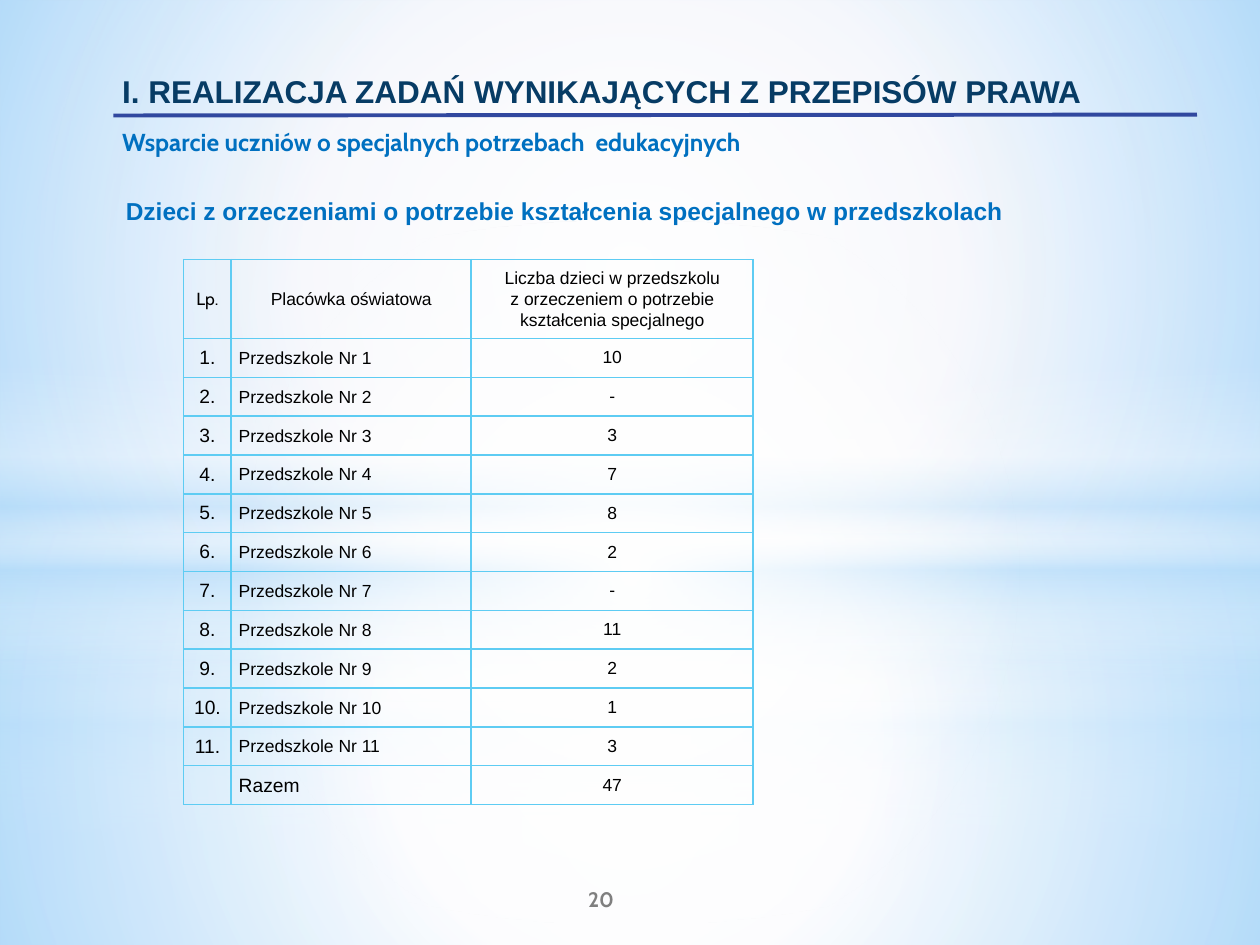
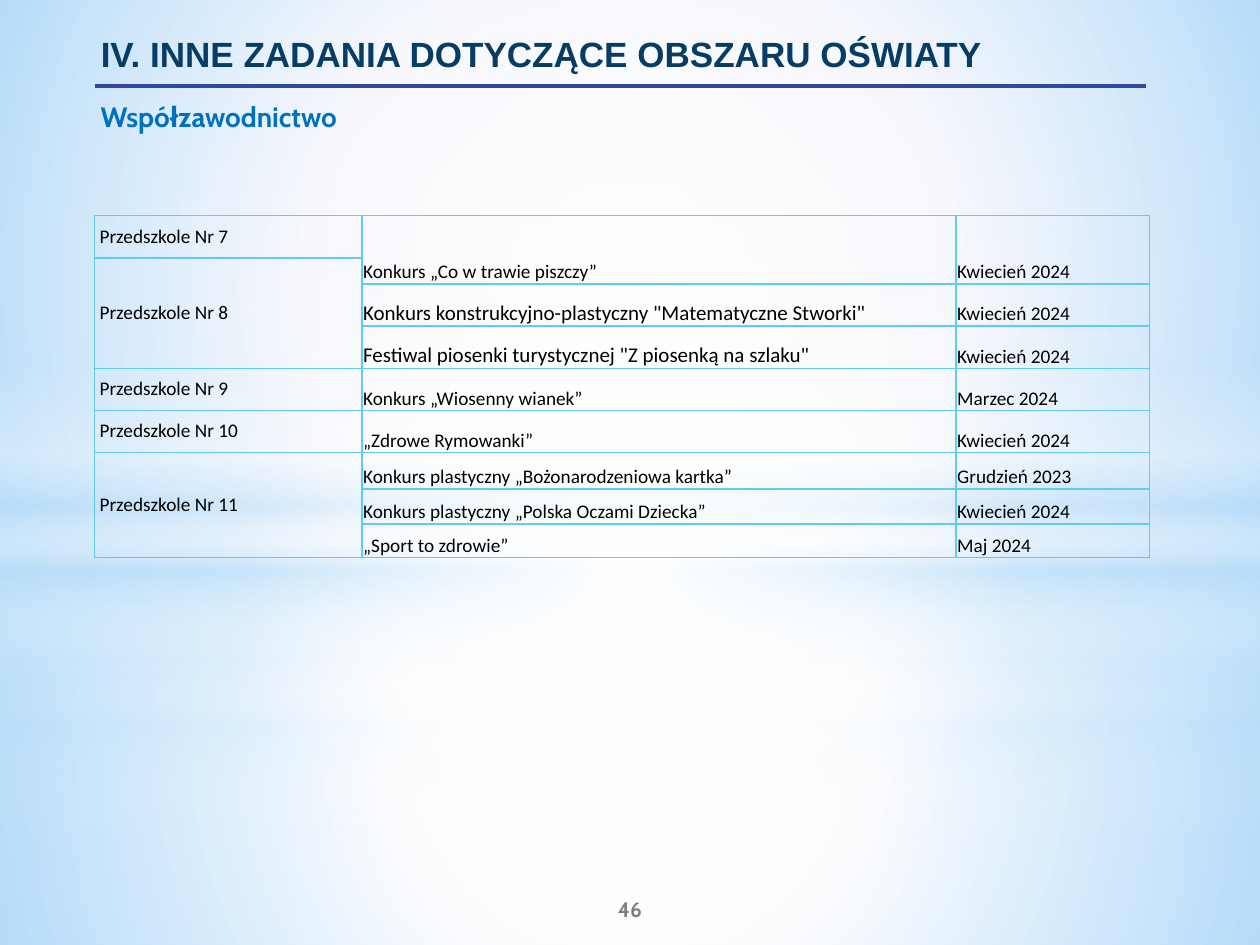
from lxml import etree
from pptx import Presentation
from pptx.dml.color import RGBColor
from pptx.enum.shapes import MSO_CONNECTOR, MSO_SHAPE
from pptx.enum.text import MSO_ANCHOR, PP_ALIGN
from pptx.oxml import parse_xml
from pptx.oxml.ns import qn
from pptx.util import Pt

RECTANGLE, ELLIPSE = MSO_SHAPE.RECTANGLE, MSO_SHAPE.OVAL
STRAIGHT = MSO_CONNECTOR.STRAIGHT
TOP, MIDDLE, BOTTOM = MSO_ANCHOR.TOP, MSO_ANCHOR.MIDDLE, MSO_ANCHOR.BOTTOM
LEFT, CENTER, JUSTIFY = PP_ALIGN.LEFT, PP_ALIGN.CENTER, PP_ALIGN.JUSTIFY

WIDTH, HEIGHT = 720, 540
NAVY, BLUE, RULE = "073C65", "0070C0", "31489F"
GRAY, BLACK, GRID = "7F7F7F", "000000", "5ECCF3"
WHITE, SKY, BACKDROP = "FFFFFF", "B4DCFA", "CAD1EE"
DRAWING = "http://schemas.openxmlformats.org/drawingml/2006/main"

# Gradient stops: position, colour, opacity in percent
LOWER_GLOW = [(0, WHITE, 91), (37, WHITE, 76), (100, SKY, 79)]
UPPER_GLOW = [(0, WHITE, 89), (48, WHITE, 62), (100, SKY, 79)]
BAND = [(0, WHITE, 0), (29, WHITE, 30), (45, SKY, 40),
        (55, WHITE, 26), (65, SKY, 60), (100, WHITE, 0)]
CIRCLE = ('<a:path path="circle"><a:fillToRect l="50000" t="50000" '
          'r="50000" b="50000"/></a:path>')
DOWNWARD = '<a:lin ang="5400000" scaled="0"/>'

# Two stacks of light: horizon, band top, reach of the central halo
LIGHT_STACKS = [(401.5, 296.5, 56), (304.5, 208.5, 54)]

PRESCHOOL_COUNTS = ["10", "-", "3", "7", "8", "2", "-", "11", "2", "1", "3"]
COUNT_HEADINGS = ["Lp.", "Placówka oświatowa",
                  "Liczba dzieci w przedszkolu\n"
                  "z orzeczeniem o potrzebie kształcenia specjalnego"]

# Preschool, contest, date; an empty text belongs to the merged cell above
CONTESTS = [
    ("Przedszkole Nr 7", "Konkurs „Co w trawie piszczy”", "Kwiecień 2024"),
    ("Przedszkole Nr 8", "", ""),
    ("", 'Konkurs konstrukcyjno-plastyczny "Matematyczne Stworki"', "Kwiecień 2024"),
    ("", 'Festiwal piosenki turystycznej "Z piosenką na szlaku"', "Kwiecień 2024"),
    ("Przedszkole Nr 9", "Konkurs „Wiosenny wianek”", "Marzec 2024"),
    ("Przedszkole Nr 10", "„Zdrowe Rymowanki”", "Kwiecień 2024"),
    ("Przedszkole Nr 11", "Konkurs plastyczny „Bożonarodzeniowa kartka”", "Grudzień 2023"),
    ("", "Konkurs plastyczny „Polska Oczami Dziecka”", "Kwiecień 2024"),
    ("", "„Sport to zdrowie”", "Maj 2024"),
]
CONTEST_MERGES = [((0, 1), (1, 1)), ((0, 2), (1, 2)), ((1, 0), (3, 0)), ((6, 0), (8, 0))]


def color(value):
    return RGBColor.from_string(value)


def points(*values):
    return [Pt(value) for value in values]


def set_font(paragraph, size, name, hex_color, bold=False):
    font = paragraph.font
    font.size, font.name, font.bold = Pt(size), name, bold
    font.color.rgb = color(hex_color)


def add_glow(slide, kind, box, stops, direction):
    """Add a borderless shape with a translucent gradient."""
    shape = slide.shapes.add_shape(kind, *points(*box))
    stop_list = "".join(
        f'<a:gs pos="{position * 1000}"><a:srgbClr val="{value}">'
        f'<a:alpha val="{opacity * 1000}"/></a:srgbClr></a:gs>'
        for position, value, opacity in stops)
    shape.element.spPr.append(parse_xml(
        f'<a:gradFill xmlns:a="{DRAWING}" rotWithShape="1">'
        f'<a:gsLst>{stop_list}</a:gsLst>{direction}</a:gradFill>'))
    shape.line.fill.background()
    shape.shadow.inherit = False


def add_background(slide, box):
    left, top, width, height = box
    slide.background.fill.solid()
    slide.background.fill.fore_color.rgb = color(BACKDROP)
    for horizon, band_top, reach in LIGHT_STACKS:
        halo = [(0, WHITE, 100), (reach, WHITE, 0), (100, WHITE, 0)]
        add_glow(slide, RECTANGLE, (left, top + horizon, width, height - horizon),
                 LOWER_GLOW, CIRCLE)
        add_glow(slide, RECTANGLE, (left, top, width, horizon), UPPER_GLOW, CIRCLE)
        add_glow(slide, RECTANGLE, (left, top + band_top, width, 180), BAND, DOWNWARD)
        add_glow(slide, ELLIPSE, (left, top + 126, width, 402), halo, CIRCLE)


def add_text(slide, box, lines, indent=0, gap=0, align=LEFT, anchor=TOP):
    """Write lines of (text, size, font, colour), all bold."""
    frame = slide.shapes.add_textbox(*points(*box)).text_frame
    frame.word_wrap = True
    frame.vertical_anchor = anchor
    frame.margin_left = Pt(7.2 + indent)
    for index, (text, *style) in enumerate(lines):
        paragraph = frame.add_paragraph() if index else frame.paragraphs[0]
        paragraph.text = text
        paragraph.alignment = align
        paragraph.space_before = Pt(gap if index else 0)
        set_font(paragraph, *style, bold=True)


def add_rule(slide, start, end):
    connector = slide.shapes.add_connector(STRAIGHT, *points(*start, *end))
    connector.line.color.rgb = color(RULE)
    connector.line.width = Pt(2.25)
    etree.SubElement(connector.element.spPr, qn("a:effectLst"))


def add_page_number(slide, box, number, align=LEFT, anchor=TOP):
    add_text(slide, box, [(number, 12, "Cabin", GRAY)], align=align, anchor=anchor)


def add_grid(slide, position, columns, rows):
    """Add an unfilled table with thin borders around every cell."""
    frame = slide.shapes.add_table(len(rows), len(columns), *points(
        *position, sum(columns), sum(rows)))
    table = frame.table
    table.first_row = table.horz_banding = False
    for column, width in zip(table.columns, columns):
        column.width = Pt(width)
    for row, height in zip(table.rows, rows):
        row.height = Pt(height)
    for cell_element in frame.element.iter(qn("a:tc")):
        properties = cell_element.get_or_add_tcPr()
        for side in "LRTB":
            properties.append(parse_xml(
                f'<a:ln{side} xmlns:a="{DRAWING}" w="12700"><a:solidFill>'
                f'<a:srgbClr val="{GRID}"/></a:solidFill></a:ln{side}>'))
    return table


def fill_cell(cell, text, size, font, align, anchor, side_margin, spacing=1.0):
    cell.fill.background()
    cell.vertical_anchor = anchor
    cell.margin_left = cell.margin_right = Pt(side_margin)
    cell.margin_top = cell.margin_bottom = 0
    paragraph = cell.text_frame.paragraphs[0]
    paragraph.text = text
    paragraph.alignment = align
    paragraph.line_spacing = spacing
    set_font(paragraph, size, font, BLACK)


def add_count_table(slide, position):
    records = [COUNT_HEADINGS]
    records += [(f"{number}.", f"Przedszkole Nr {number}", count)
                for number, count in enumerate(PRESCHOOL_COUNTS, 1)]
    records.append(("", "Razem", "47"))
    last = len(records) - 1
    table = add_grid(slide, position, [27.15, 137.15, 161.15], [45.1] + [22.2] * last)
    for row, record in enumerate(records):
        for column, text in enumerate(record):
            is_name = column == 1 and row > 0
            large = (column == 0 and row > 0) or (is_name and row == last)
            align = CENTER if not is_name else LEFT if row == last else JUSTIFY
            font = "Cabin" if row == column == 0 else "Arial"
            spacing = 1.06 if row == 0 or is_name else 1.0
            fill_cell(table.cell(row, column), text, 11 if large else 10, font,
                      align, MIDDLE, 4.3, spacing)


def add_contest_table(slide, position):
    table = add_grid(slide, position, [152.85, 339.45, 110.55],
                     [24.3, 14.8, 24, 24.3, 24, 24, 21.1, 20, 19.2])
    for first, last in CONTEST_MERGES:
        table.cell(*first).merge(table.cell(*last))
    for row, record in enumerate(CONTESTS):
        for column, text in enumerate(record):
            size = 12 if column == 1 and '"' in text else 11
            anchor, margin = (BOTTOM, 0.7) if column else (MIDDLE, 2.9)
            fill_cell(table.cell(row, column), text, size, "Calibri",
                      LEFT, anchor, margin)


def build_support_slide(slide, box):
    left, top, width, height = box
    add_background(slide, box)
    add_text(slide, (left + 51.8, top + 37.4, 632, 56), [
        ("I. REALIZACJA ZADAŃ WYNIKAJĄCYCH Z PRZEPISÓW PRAWA", 18, "Arial", NAVY),
        ("Wsparcie uczniów o specjalnych potrzebach  edukacyjnych", 14, "Cabin", BLUE),
    ], indent=10.8, gap=10)
    add_rule(slide, (left + 64.8, top + 66), (left + 684, top + 65.5))
    add_text(slide, (left + 64.8, top + 108.7, 584, 24.5), [
        ("Dzieci z orzeczeniami o potrzebie kształcenia specjalnego w przedszkolach",
         14, "Arial", BLUE)])
    add_count_table(slide, (left + 105, top + 148.3))
    add_page_number(slide, (left + 329, top + 503.3, 45.4, 21.6), "20")


def build_contest_slide(slide, box):
    left, top, width, height = box
    add_background(slide, box)
    add_page_number(slide, (left + 288, top + 505.4, 144, 28.8), "46", CENTER, MIDDLE)
    add_text(slide, (left + 36, top + 15.1, 648, 62.6), [
        ("IV. INNE ZADANIA DOTYCZĄCE OBSZARU OŚWIATY", 20, "Arial", NAVY)], indent=14.4)
    add_rule(slide, (left + 54, top + 49), (left + 655, top + 49))
    add_text(slide, (left + 50.4, top + 53.3, 620, 26.6), [
        ("Współzawodnictwo", 16, "Cabin", BLUE)])
    add_contest_table(slide, (left + 54, top + 123.1))


def main():
    presentation = Presentation()
    presentation.slide_width, presentation.slide_height = points(WIDTH, HEIGHT)
    blank_layout = presentation.slide_layouts[6]
    for build in (build_support_slide, build_contest_slide):
        build(presentation.slides.add_slide(blank_layout), (0, 0, WIDTH, HEIGHT))
    presentation.save("out.pptx")


if __name__ == "__main__":
    main()
